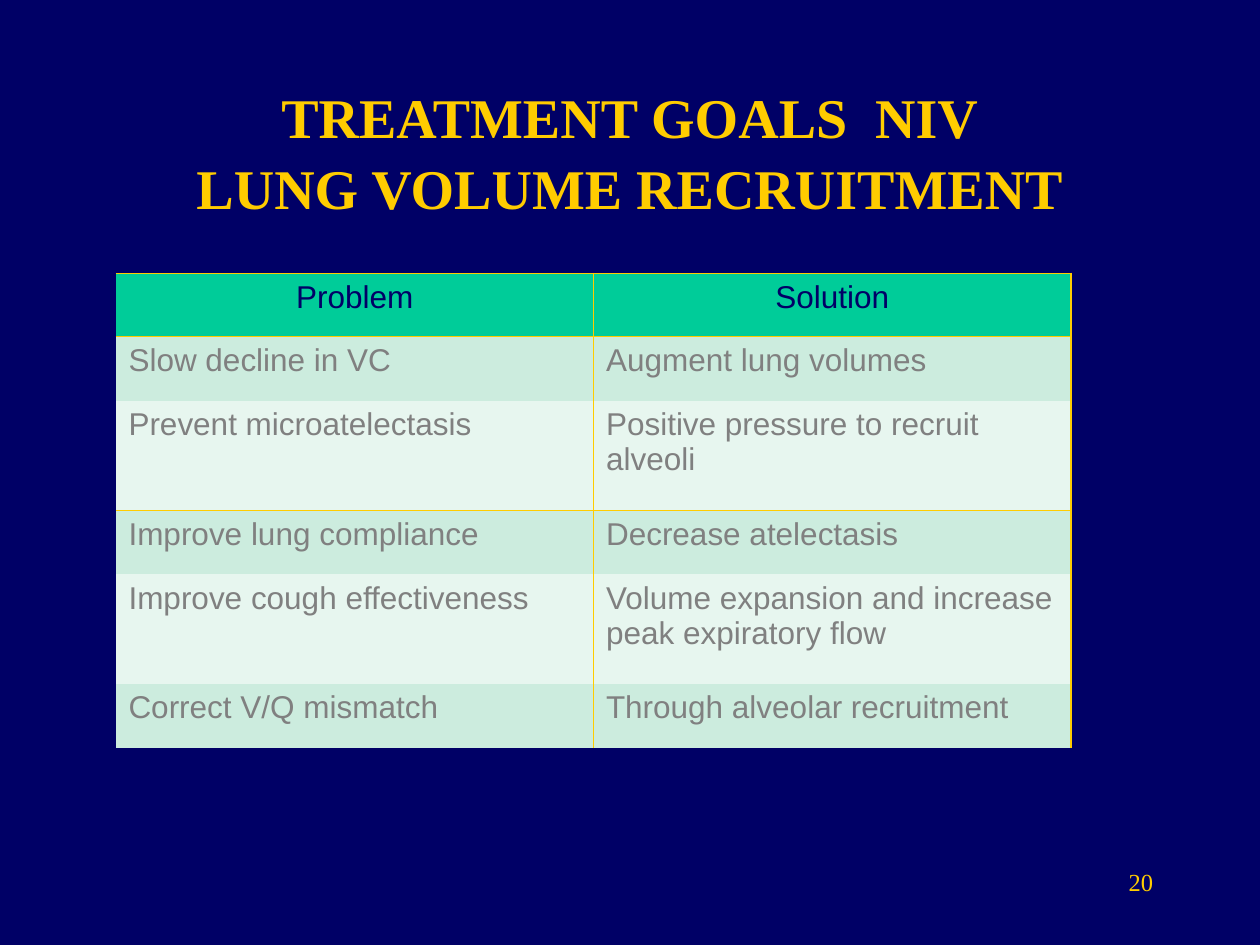
from dataclasses import dataclass

from lxml.etree import SubElement
from pptx import Presentation
from pptx.dml.color import RGBColor
from pptx.enum.text import MSO_ANCHOR, MSO_AUTO_SIZE, PP_ALIGN
from pptx.oxml.ns import qn
from pptx.util import Inches, Pt


@dataclass(frozen=True)
class Theme:
    navy: str = "000066"
    gold: str = "FFCC00"
    green: str = "00CC99"
    bands: tuple = ("CCECDE", "E7F6EF")
    grey: str = "808080"
    serif: str = "Times New Roman"
    sans: str = "Arial"
    title_size: int = 32
    table_size: int = 18
    number_size: int = 14


THEME = Theme()
GOALS = [
    ("Problem", "Solution"),
    ("Slow decline in VC", "Augment lung volumes"),
    ("Prevent microatelectasis", "Positive pressure to recruit alveoli"),
    ("Improve lung compliance", "Decrease atelectasis"),
    ("Improve cough effectiveness",
     "Volume expansion and increase peak expiratory flow"),
    ("Correct V/Q mismatch", "Through alveolar recruitment"),
]
ROW_HEIGHTS = (0.5, 0.51, 0.87, 0.51, 0.87, 0.51)
RULED_BELOW = (0, 2)  # rows closed by a gold line


def format_text(tf, font, size, color, align, bold=False):
    for p in tf.paragraphs:
        p.alignment = align
        for r in p.runs:
            r.font.name = font
            r.font.size = Pt(size)
            r.font.bold = bold
            r.font.color.rgb = RGBColor.from_string(color)


def set_borders(cell, gold_sides):
    """Draw gold lines on the named sides (L, R, T, B) and clear the others."""
    props = cell._tc.get_or_add_tcPr()
    for i, side in enumerate("LRTB"):
        line = props.makeelement(qn(f"a:ln{side}"), {"w": str(Pt(1))})
        if side in gold_sides:
            fill = SubElement(line, qn("a:solidFill"))
            SubElement(fill, qn("a:srgbClr"), val=THEME.gold)
        else:
            SubElement(line, qn("a:noFill"))
        props.insert(i, line)


def add_title(s, text, left, top, width, height):
    sp = s.shapes.title
    sp.left, sp.top, sp.width, sp.height = map(Inches, (left, top, width, height))
    tf = sp.text_frame
    tf.text = text
    tf.auto_size = MSO_AUTO_SIZE.NONE
    tf.vertical_anchor = MSO_ANCHOR.TOP
    tf.margin_left = tf.margin_right = tf.margin_top = tf.margin_bottom = 0
    tf.paragraphs[0].line_spacing = 1.06
    format_text(tf, THEME.serif, THEME.title_size, THEME.gold,
                PP_ALIGN.CENTER, bold=True)


def add_goals_table(s, left, top, width):
    table = s.shapes.add_table(
        len(GOALS), len(GOALS[0]), Inches(left), Inches(top),
        Inches(width), Inches(sum(ROW_HEIGHTS))).table
    table.first_row = table.horz_banding = False
    for i, (texts, height) in enumerate(zip(GOALS, ROW_HEIGHTS)):
        table.rows[i].height = Inches(height)
        header = i == 0
        sides = "R"
        if header or i - 1 in RULED_BELOW:
            sides += "T"
        if i in RULED_BELOW:
            sides += "B"
        for j, text in enumerate(texts):
            cell = table.cell(i, j)
            cell.text_frame.text = text
            format_text(cell.text_frame, THEME.sans, THEME.table_size,
                        THEME.navy if header else THEME.grey,
                        PP_ALIGN.CENTER if header else PP_ALIGN.LEFT)
            cell.fill.solid()
            cell.fill.fore_color.rgb = RGBColor.from_string(
                THEME.green if header else THEME.bands[(i - 1) % 2])
            set_borders(cell, sides + "L" if j else sides)


def add_slide_number(s, number, left, top, width, height):
    sp = s.shapes.add_textbox(*map(Inches, (left, top, width, height)))
    tf = sp.text_frame
    tf.word_wrap = True
    tf.text = str(number)
    format_text(tf, THEME.serif, THEME.number_size, THEME.gold, PP_ALIGN.RIGHT)


def main():
    prs = Presentation()
    prs.slide_width, prs.slide_height = Inches(10), Inches(7.5)
    s = prs.slides.add_slide(prs.slide_layouts.get_by_name("Title Only"))
    s.background.fill.solid()
    s.background.fill.fore_color.rgb = RGBColor.from_string(THEME.navy)
    add_slide_number(s, 20, 7.17, 6.83, 2.08, 0.5)
    add_title(s, "TREATMENT GOALS  NIV\vLUNG VOLUME RECRUITMENT",
              0.43, 0.62, 9.14, 1)
    add_goals_table(s, 0.92, 2.17, 7.58)
    prs.save("out.pptx")


if __name__ == "__main__":
    main()
